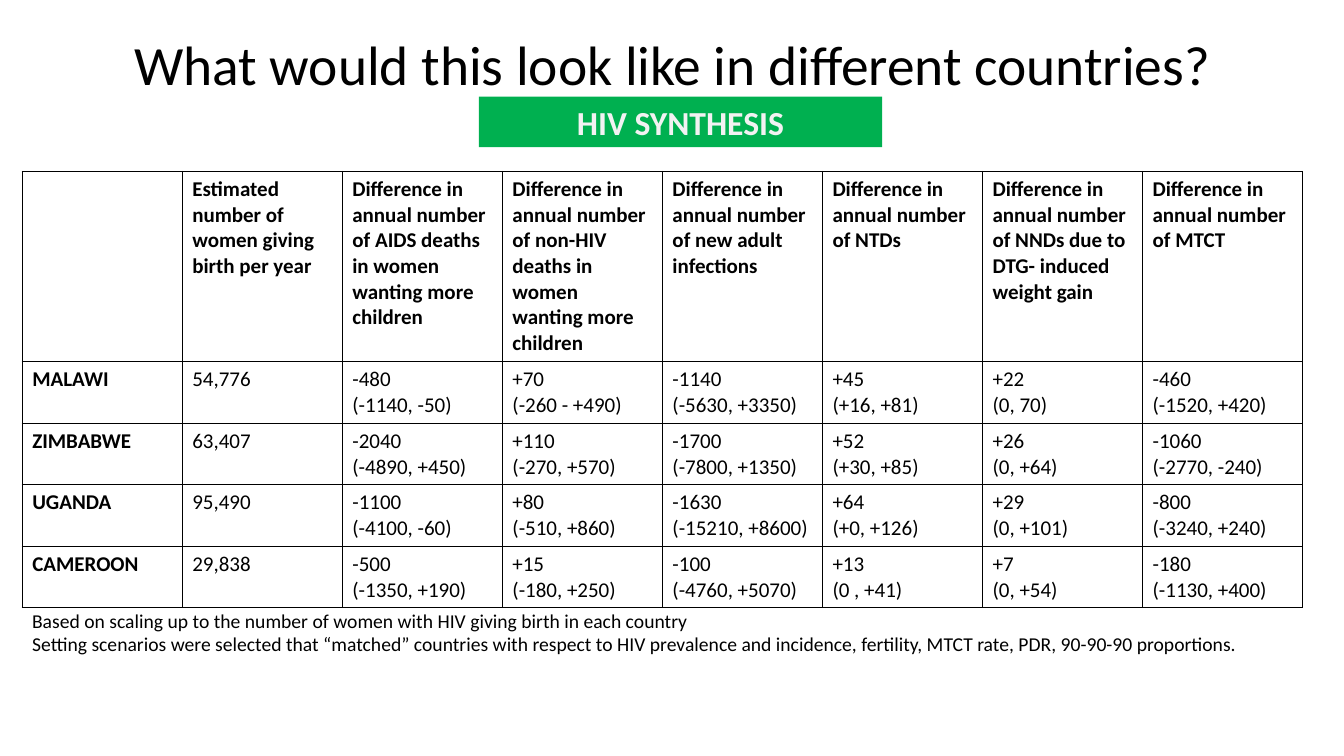
from lxml import etree
from pptx import Presentation
from pptx.dml.color import RGBColor
from pptx.enum.shapes import MSO_SHAPE
from pptx.enum.text import MSO_ANCHOR, PP_ALIGN
from pptx.oxml.ns import qn
from pptx.util import Inches, Pt

RECT = MSO_SHAPE.RECTANGLE
MIDDLE = MSO_ANCHOR.MIDDLE
LEFT, CENTER = PP_ALIGN.LEFT, PP_ALIGN.CENTER
BLACK, WHITE, GREEN, PALE = "000000", "FFFFFF", "00B050", "F2F2F2"
FONT = "Calibri"

DIFF = "Difference in annual number of "
HEADS = ["", "Estimated number of women giving birth per year"] + [
    DIFF + item for item in (
        "AIDS deaths in women wanting more children",
        "non-HIV deaths in women wanting more children",
        "new adult infections",
        "NTDs",
        "NNDs due to DTG- induced weight gain",
        "MTCT",
    )
]
ROWS = [
    ["MALAWI", "54,776", "-480\n(-1140, -50)", "+70\n(-260 - +490)",
     "-1140\n(-5630, +3350)", "+45\n(+16, +81)", "+22\n(0, 70)",
     "-460\n(-1520, +420)"],
    ["ZIMBABWE", "63,407", "-2040\n(-4890, +450)", "+110\n(-270, +570)",
     "-1700\n(-7800, +1350)", "+52\n(+30, +85)", "+26\n(0, +64)",
     "-1060\n(-2770, -240)"],
    ["UGANDA", "95,490", "-1100\n(-4100, -60)", "+80\n(-510, +860)",
     "-1630\n(-15210, +8600)", "+64\n(+0, +126)", "+29\n(0, +101)",
     "-800\n(-3240, +240)"],
    ["CAMEROON", "29,838", "-500\n(-1350, +190)", "+15\n(-180, +250)",
     "-100\n(-4760, +5070)", "+13\n(0 , +41)", "+7\n(0, +54)",
     "-180\n(-1130, +400)"],
]
NOTES = (
    "Based on scaling up to the number of women with HIV giving birth in "
    "each country\n"
    "Setting scenarios were selected that “matched” countries with respect "
    "to HIV prevalence and incidence, fertility, MTCT rate, PDR, 90-90-90 "
    "proportions."
)


def paint(fill, color):
    fill.solid()
    fill.fore_color.rgb = RGBColor.from_string(color)


def write(frame, text, size, color=BLACK, bold=False, align=LEFT):
    """Fill a text frame, one paragraph for each line."""
    frame.word_wrap = True
    frame.text = text
    for para in frame.paragraphs:
        para.alignment = align
        font = para.font
        font.name, font.size, font.bold = FONT, Pt(size), bold
        font.color.rgb = RGBColor.from_string(color)


def add_text(slide, box, text, size, align=LEFT):
    frame = slide.shapes.add_textbox(*map(Inches, box)).text_frame
    write(frame, text, size, align=align)
    return frame


def add_title(slide, box, text):
    add_text(slide, box, text, 39.6, CENTER).vertical_anchor = MIDDLE


def add_banner(slide, box, text):
    banner = slide.shapes.add_shape(RECT, *map(Inches, box))
    banner.shadow.inherit = False
    paint(banner.fill, GREEN)
    banner.line.fill.background()
    write(banner.text_frame, text, 24, PALE, True, CENTER)


def add_edges(cell, color, width):
    """Draw the four borders of a cell; call before its fill is set."""
    props = cell._tc.get_or_add_tcPr()
    for side in ("lnL", "lnR", "lnT", "lnB"):
        line = etree.SubElement(props, qn("a:" + side), w=str(Pt(width)))
        solid = etree.SubElement(line, qn("a:solidFill"))
        etree.SubElement(solid, qn("a:srgbClr"), val=color)


def add_grid(slide, box, heads, rows, low):
    """Draw the table; body rows are low inches high, the head takes the rest."""
    left, top, width, height = box
    data = [heads] + rows
    table = slide.shapes.add_table(
        len(data), len(heads), *map(Inches, box)).table
    for col in table.columns:
        col.width = Inches(width / len(heads))
    for r, texts in enumerate(data):
        table.rows[r].height = Inches(low if r else height - low * len(rows))
        for c, text in enumerate(texts):
            cell = table.cell(r, c)
            add_edges(cell, BLACK, 1)
            paint(cell.fill, WHITE)
            write(cell.text_frame, text, 15, bold=r == 0 or c == 0)


def main():
    deck = Presentation()
    deck.slide_width, deck.slide_height = Inches(13.33), Inches(7.5)
    slide = deck.slides.add_slide(deck.slide_layouts[6])
    add_title(slide, (0.67, 0, 12, 1.25),
              "What would this look like in different countries?")
    add_grid(slide, (0.22, 1.7, 12.7, 4.33), HEADS, ROWS, 0.61)
    add_banner(slide, (4.75, 0.96, 4, 0.5), "HIV SYNTHESIS")
    add_text(slide, (0.22, 5.99, 12.7, 0.81), NOTES, 14)
    deck.save("out.pptx")


if __name__ == "__main__":
    main()
